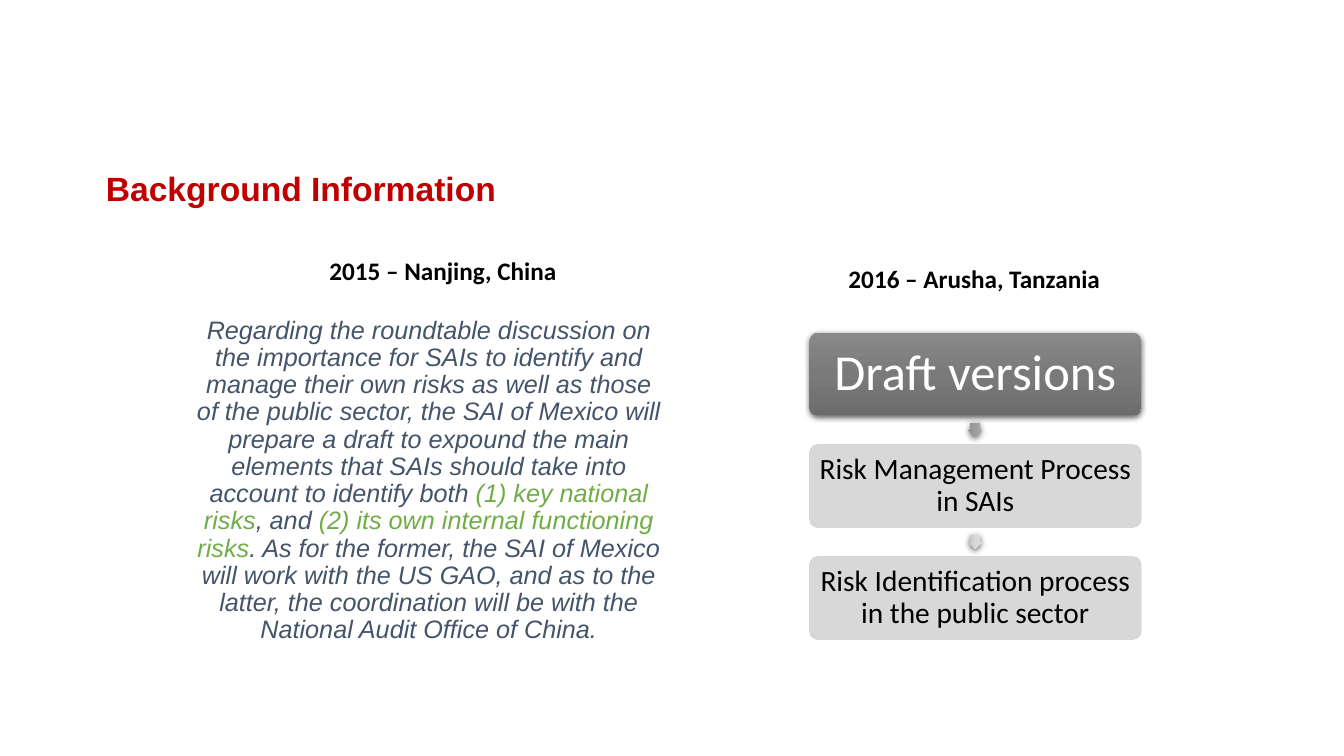
from dataclasses import dataclass
from lxml.etree import SubElement as Sub
from pptx import Presentation
from pptx.dml.color import RGBColor as Rgb
from pptx.enum.shapes import MSO_SHAPE as Kind
from pptx.enum.text import MSO_ANCHOR as Anchor, MSO_AUTO_SIZE as Fit, PP_ALIGN as Align
from pptx.oxml.ns import qn
from pptx.util import Pt


@dataclass(frozen=True)
class Theme:
    sans: str = "Arial"
    face: str = "Calibri"
    red: str = "C00000"
    slate: str = "44546A"
    green: str = "70AD47"
    black: str = "000000"
    white: str = "FFFFFF"
    pale: str = "D4D4D4"
    dark: tuple = ("898989", "7A7A7A", "6C6C6C")
    mid: tuple = ("A8A8A8", "9E9E9E", "8C8C8C")
    light: tuple = ("DFDFDF", "D9D9D9", "C0C0C0")
    head: int = 24
    text: int = 18
    lead: int = 36
    step: int = 21


class Deck:
    def __init__(self, theme):
        self.theme = theme
        self.prs = Presentation()
        self.prs.slide_width, self.prs.slide_height = Pt(960), Pt(540)
        self.slide = self.prs.slides.add_slide(self.prs.slide_layouts[1])

    def place(self, shape, box):
        shape.left, shape.top, shape.width, shape.height = map(Pt, box)

    def font(self, para, name, size, color=None, bold=False, italic=False):
        font = para.font
        font.name, font.size, font.bold, font.italic = name, Pt(size), bold, italic
        if color:
            font.color.rgb = Rgb.from_string(color)

    def title(self, text, box):
        shape = self.slide.shapes.title
        self.place(shape, box)
        frame = shape.text_frame
        frame.text, frame.auto_size = text, Fit.NONE
        frame.vertical_anchor = Anchor.MIDDLE
        para = frame.paragraphs[0]
        para.alignment, para.line_spacing = Align.LEFT, 0.9
        self.font(para, self.theme.sans, self.theme.head, self.theme.red, bold=True)

    def body(self, parts, box):
        shape = self.slide.placeholders[1]
        self.place(shape, box)
        frame = shape.text_frame
        frame.auto_size = Fit.NONE
        para = frame.paragraphs[0]
        para.level, para.alignment, para.line_spacing = 1, Align.CENTER, 0.9
        para.space_before = Pt(0)
        props = para._p.get_or_add_pPr()
        props.set("marL", str(Pt(36)))
        props.set("indent", "0")
        Sub(props, qn("a:buNone"))
        self.font(para, self.theme.sans, self.theme.text, italic=True)
        for text, color in parts:
            run = para.add_run()
            run.text = text
            run.font.color.rgb = Rgb.from_string(color)

    def label(self, text, box):
        shape = self.slide.shapes.add_textbox(*map(Pt, box))
        frame = shape.text_frame
        frame.text, frame.word_wrap = text, False
        self.font(frame.paragraphs[0], self.theme.face, self.theme.text,
                  self.theme.black, bold=True)

    def shape(self, kind, box, fill):
        """A tuple fill is a shaded, shadowed gradient; a string is a flat tint."""
        shape = self.slide.shapes.add_shape(kind, *map(Pt, box))
        shape.shadow.inherit = False
        if isinstance(fill, tuple):
            shape.line.fill.background()
            self.shade(shape, fill)
            self.shadow(shape)
        else:
            for part in (shape.fill, shape.line.fill):
                part.solid()
                part.fore_color.rgb = Rgb.from_string(fill)
            shape.line.width = Pt(0.5)
            for tint in shape._element.spPr.iter(qn("a:srgbClr")):
                Sub(tint, qn("a:alpha"), val="90000")
        return shape

    def shade(self, shape, colors):
        shape.fill.gradient()
        grad = shape._element.spPr.find(qn("a:gradFill"))
        stops = grad.find(qn("a:gsLst"))
        for stop in list(stops):
            stops.remove(stop)
        for pos, color in zip((0, 50000, 100000), colors):
            stop = Sub(stops, qn("a:gs"), pos=str(pos))
            Sub(stop, qn("a:srgbClr"), val=color)
        grad.find(qn("a:lin")).set("ang", "5400000")

    def shadow(self, shape):
        effects = shape._element.spPr.find(qn("a:effectLst"))
        outer = Sub(effects, qn("a:outerShdw"), blurRad=str(Pt(4.5)), dist=str(Pt(1.5)),
                    dir="5400000", algn="ctr", rotWithShape="0")
        tint = Sub(outer, qn("a:srgbClr"), val=self.theme.black)
        Sub(tint, qn("a:alpha"), val="63000")

    def card(self, text, box, fill, size, color, inset):
        shape = self.shape(Kind.ROUNDED_RECTANGLE, box, fill)
        shape.adjustments[0] = 0.1
        frame = shape.text_frame
        frame.text, frame.word_wrap = text, True
        frame.vertical_anchor = Anchor.MIDDLE
        frame.margin_left = frame.margin_right = Pt(inset)
        frame.margin_top = frame.margin_bottom = Pt(inset)
        para = frame.paragraphs[0]
        para.alignment, para.line_spacing = Align.CENTER, 0.9
        self.font(para, self.theme.face, size, color)

    def arrow(self, box, fill):
        shape = self.shape(Kind.RIGHT_ARROW, box, fill)
        shape.rotation = 90
        shape.adjustments[0], shape.adjustments[1] = 0.667, 0.5


def main():
    look = Theme()
    deck = Deck(look)

    # Heading and the roundtable summary
    deck.title("Background Information", (68.4, 98, 831, 76.3))
    deck.body([
        ("Regarding the roundtable discussion on the importance for SAIs to identify and "
         "manage their own risks as well as those of the public sector, the SAI of Mexico "
         "will prepare a draft to expound the main elements that SAIs should take into "
         "account to identify both ", look.slate),
        ("(1) key national risks", look.green),
        (", and ", look.slate),
        ("(2) its own internal functioning risks", look.green),
        (". As for the former, the SAI of Mexico will work with the US GAO, and as to the "
         "latter, the coordination will be with the National Audit Office of China.",
         look.slate),
    ], (95, 223.2, 386.6, 242.6))

    # Column labels
    deck.label("2015 – Nanjing, China", (228.2, 178.6, 178.6, 29))
    deck.label("2016 – Arusha, Tanzania", (599, 184.3, 195.8, 29))

    # Chain of drafts, joined by small arrows
    left, top, wide, high, pitch, tip = 578.2, 237.6, 236.9, 59.2, 80, 10.2
    cards = [
        ("Draft versions", look.dark, look.lead, look.white, 5.4),
        ("Risk Management Process in SAIs", look.pale, look.step, look.black, 4),
        ("Risk Identification process in the public sector", look.pale, look.step,
         look.black, 4),
    ]
    for row, (text, *style) in enumerate(cards):
        deck.card(text, (left, top + row * pitch, wide, high), *style)
    for row, fill in enumerate((look.mid, look.light)):
        gap = top + row * pitch + (high + pitch) / 2
        deck.arrow((left + (wide - tip) / 2, gap - tip / 2, tip, tip), fill)

    deck.prs.save("out.pptx")


if __name__ == "__main__":
    main()
